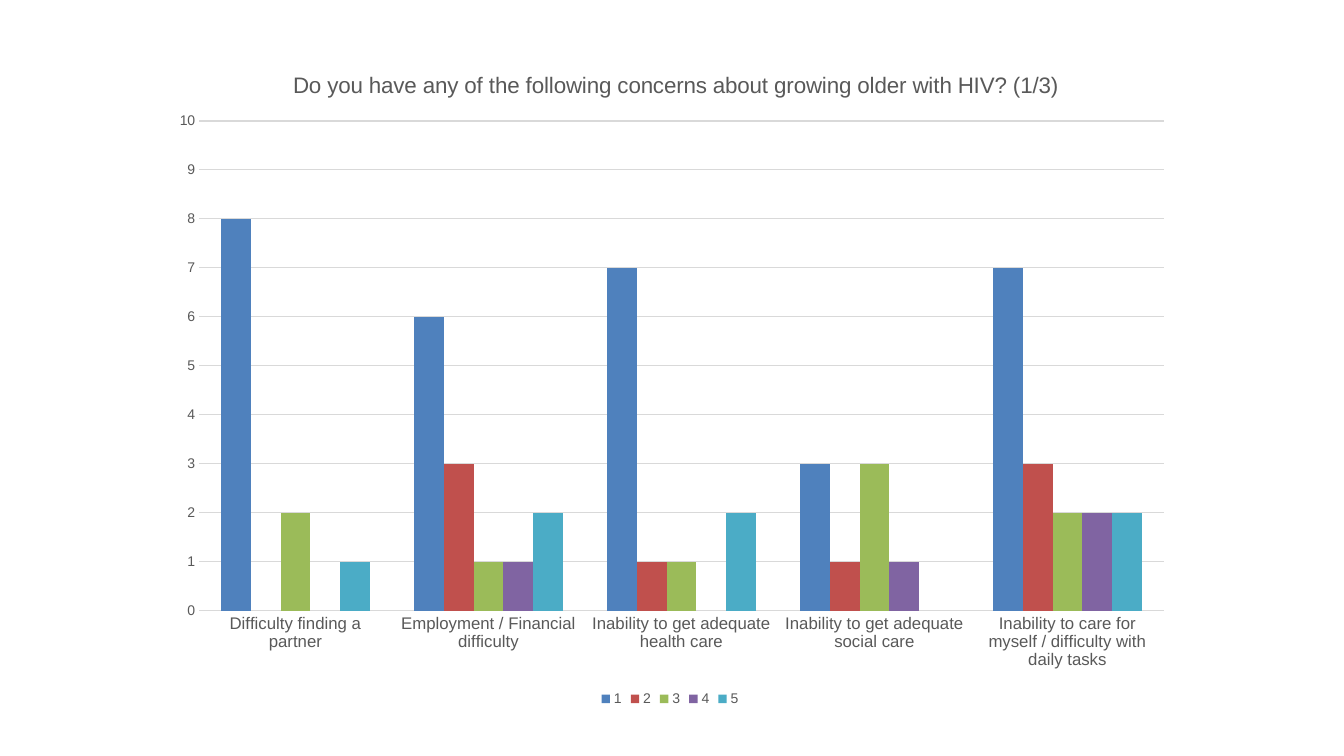
import pptx
import pptx.chart.data
import pptx.dml.color
import pptx.enum.chart
import pptx.oxml
import pptx.oxml.ns
import pptx.util

SCALE = 914400 / 100.8
FONT = "Arial"
GREY = pptx.dml.color.RGBColor(0x59, 0x59, 0x59)
GRID = pptx.dml.color.RGBColor(0xD9, 0xD9, 0xD9)
BLUE = pptx.dml.color.RGBColor(0x4F, 0x81, 0xBD)
RED = pptx.dml.color.RGBColor(0xC0, 0x50, 0x4D)
GREEN = pptx.dml.color.RGBColor(0x9B, 0xBB, 0x59)
PURPLE = pptx.dml.color.RGBColor(0x80, 0x64, 0xA2)
TEAL = pptx.dml.color.RGBColor(0x4B, 0xAC, 0xC6)

TITLE = "Do you have any of the following concerns about growing older with HIV? (1/3)"
CONCERNS = [
    "Difficulty finding a partner",
    "Employment / Financial difficulty",
    "Inability to get adequate health care",
    "Inability to get adequate social care",
    "Inability to care for myself / difficulty with daily tasks",
]
RATINGS = [
    ("1", BLUE, (8, 6, 7, 3, 7)),
    ("2", RED, (None, 3, 1, 1, 3)),
    ("3", GREEN, (2, 1, 1, 3, 2)),
    ("4", PURPLE, (None, 1, None, 1, 2)),
    ("5", TEAL, (1, 2, 2, None, 2)),
]


def px(length):
    """Turn a length in px into EMU."""
    return pptx.util.Emu(round(length * SCALE))


def style_font(font, size):
    """Give a chart font its face, size and colour."""
    font.name = FONT
    font.size = pptx.util.Pt(size)
    font.bold = False
    font.color.rgb = GREY


def place_part(part, index, box, left, top, size=None):
    """Place a chart part at px offsets inside the chart box."""
    qualified = pptx.oxml.ns.qn
    for old_layout in part.findall(qualified("c:layout")):
        part.remove(old_layout)
    settings = [("xMode", "edge"), ("yMode", "edge"),
                ("x", round(left / box[2], 4)), ("y", round(top / box[3], 4))]
    if size:
        settings.insert(0, ("layoutTarget", "inner"))
        settings += [("w", round(size[0] / box[2], 4)), ("h", round(size[1] / box[3], 4))]
    children = "".join(f'<c:{name} val="{value}"/>' for name, value in settings)
    namespace = pptx.oxml.ns.nsdecls("c")
    layout = pptx.oxml.parse_xml(
        f"<c:layout {namespace}><c:manualLayout>{children}</c:manualLayout></c:layout>")
    part.insert(index, layout)


def style_axes(chart):
    """Format the concern axis and the count axis."""
    for axis, size in ((chart.category_axis, 12), (chart.value_axis, 10)):
        style_font(axis.tick_labels.font, size)
        axis.major_tick_mark = pptx.enum.chart.XL_TICK_MARK.NONE
        axis.minor_tick_mark = pptx.enum.chart.XL_TICK_MARK.NONE
        axis.format.line.fill.background()
    counts = chart.value_axis
    counts.minimum_scale = 0
    counts.maximum_scale = 10
    counts.major_unit = 1
    counts.has_major_gridlines = True
    counts.major_gridlines.format.line.color.rgb = GRID
    counts.major_gridlines.format.line.width = pptx.util.Pt(0.75)


def add_concerns_chart(page, box):
    """Add the clustered column chart with its title and legend."""
    data = pptx.chart.data.CategoryChartData()
    data.categories = CONCERNS
    for name, _, values in RATINGS:
        data.add_series(name, values)
    chart = page.shapes.add_chart(
        pptx.enum.chart.XL_CHART_TYPE.COLUMN_CLUSTERED, *map(px, box), data).chart
    style_font(chart.font, 10)

    chart.has_title = True
    span = chart.chart_title.text_frame.paragraphs[0].add_run()
    span.text = TITLE
    style_font(span.font, 16)
    chart.chart_title.include_in_layout = False

    plot = chart.plots[0]
    plot.gap_width = 150
    plot.overlap = 0
    plot.vary_by_categories = False
    for series, (_, colour, _) in zip(plot.series, RATINGS):
        series.format.fill.solid()
        series.format.fill.fore_color.rgb = colour
        series.invert_if_negative = False
    style_axes(chart)

    chart.has_legend = True
    chart.legend.position = pptx.enum.chart.XL_LEGEND_POSITION.BOTTOM
    chart.legend.include_in_layout = False
    style_font(chart.legend.font, 10)

    frame = chart.element.find(pptx.oxml.ns.qn("c:chart"))
    place_part(frame.find(pptx.oxml.ns.qn("c:title")), 1, box, 130, 24)
    place_part(frame.find(pptx.oxml.ns.qn("c:plotArea")), 0, box, 40, 78, (965, 490))
    place_part(frame.find(pptx.oxml.ns.qn("c:legend")), 1, box, 438, 646)


def main():
    """Build the slide and save it."""
    deck = pptx.Presentation()
    deck.slide_width = px(1344)
    deck.slide_height = px(756)
    page = deck.slides.add_slide(deck.slide_layouts[6])
    add_concerns_chart(page, (159, 43, 1025, 669))
    deck.save("out.pptx")


if __name__ == "__main__":
    main()
